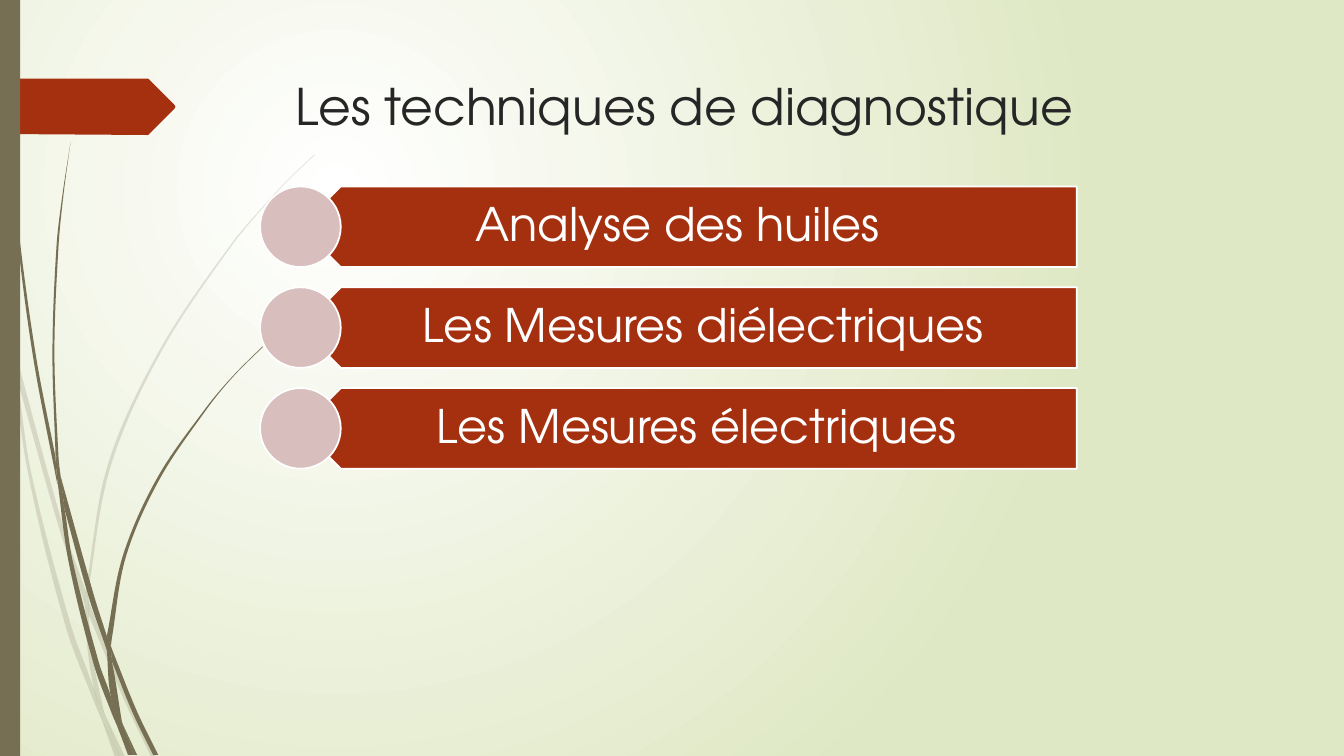
import math
import pptx
import pptx.util
import pptx.oxml
import pptx.dml.color
import pptx.enum.shapes
import pptx.enum.text
from pptx.util import Inches

FONT = "TeX Gyre Adventor"
RUST = "A53010"
OLIVE = "766F54"
DRAWING = 'xmlns:a="http://schemas.openxmlformats.org/drawingml/2006/main"'
SHAPES = pptx.enum.shapes.MSO_SHAPE


def color(hex_string):
    return pptx.dml.color.RGBColor.from_string(hex_string)


def curve_controls(knots):
    padded = [knots[0], *knots, knots[-1]]
    tangents = []
    for before, knot, after in zip(padded, knots, padded[2:]):
        reach = math.dist(before, knot) + math.dist(knot, after)
        tangents.append([(b - a) / reach for a, b in zip(before, after)])
    controls = []
    for start, end, leaving, arriving in zip(knots, knots[1:], tangents, tangents[1:]):
        third = math.dist(start, end) / 3
        controls.append((
            [p + third * m for p, m in zip(start, leaving)],
            [p - third * m for p, m in zip(end, arriving)],
            end,
        ))
    return controls


presentation = pptx.Presentation()
presentation.slide_width = Inches(13.33)
presentation.slide_height = Inches(7.5)
slide = presentation.slides.add_slide(presentation.slide_layouts[5])

background = slide.background.fill
background.gradient()
for stop, hex_string in zip(background.gradient_stops, ["FFFFFF", "DFE8C4"]):
    stop.color.rgb = color(hex_string)
gradient = slide.element.xpath(".//a:gradFill")[0]
linear = gradient.xpath("a:lin")[0]
gradient.replace(linear, pptx.oxml.parse_xml(
    f'<a:path {DRAWING} path="circle">'
    '<a:fillToRect l="50000" t="50000" r="100000" b="100000"/></a:path>'
))

pale_blades = [
    ([(0, 2.99), (0.1, 3.44), (0.11, 3.5)], [(0, 2.82), (0.09, 3.22), (0.11, 3.5)]),
    ([(0.17, 3.76), (0.58, 5.22), (0.84, 5.99)], [(0.14, 3.45), (0.62, 5.2), (0.85, 5.86)]),
    ([(0.88, 6.1), (1.23, 6.94), (1.5, 7.51)], [(0.88, 5.96), (0.92, 6.07), (1.27, 6.92), (1.55, 7.51)]),
    ([(1.05, 7.11), (1.19, 7.51)], [(1.05, 7.11), (1.24, 7.51)]),
    ([(0.11, 3.5), (0.28, 4.7), (0.65, 6.21), (0.92, 6.93), (1.01, 7.14)],
     [(0.11, 3.5), (0.17, 3.76), (0.31, 4.69), (0.7, 6.19), (0.93, 6.83), (0.99, 7.07), (1.01, 7.14)]),
    ([(0.84, 5.99), (0.87, 6.46), (0.93, 6.83), (0.96, 6.92), (1.05, 7.11)],
     [(0.88, 6.08), (0.91, 6.46), (1.03, 7.06), (1.05, 7.11)]),
    ([(3.12, 1.53), (2.89, 1.75), (2.68, 1.97), (2.28, 2.44), (1.58, 3.48), (1.07, 4.61), (0.85, 5.86)],
     [(3.12, 1.54), (2.9, 1.75), (2.68, 1.98), (2.29, 2.45), (1.6, 3.49), (1.1, 4.62), (0.88, 5.84), (0.88, 5.96)]),
    ([(1.01, 7.14), (1.14, 7.51)], [(1.01, 7.14), (1.19, 7.51)]),
    ([(0.85, 5.86), (0.84, 5.99), (0.88, 6.08)], [(0.85, 5.86), (0.88, 5.96), (0.88, 6.1)]),
    ([(0.93, 6.83), (0.99, 7.07), (1.01, 7.14), (1.19, 7.51)],
     [(0.93, 6.83), (0.96, 6.92), (1.05, 7.11), (1.19, 7.51)]),
]
dark_blades = [
    ([(0.03, 0), (0.07, 1.1), (0.17, 2.33), (0.33, 3.55), (0.57, 4.81)],
     [(0.04, 0), (0.08, 1.09), (0.19, 2.32), (0.36, 3.55), (0.55, 4.53)]),
    ([(0.64, 5.05), (0.88, 5.92), (1.06, 6.45)], [(0.6, 4.72), (0.93, 5.9), (1.06, 6.31)]),
    ([(1.11, 6.56), (1.32, 7.08), (1.52, 7.49)], [(1.1, 6.41), (1.13, 6.49), (1.36, 7.06), (1.57, 7.49)]),
    ([(0.57, 4.77), (0.68, 5.57), (0.93, 6.59), (1.11, 7.08), (1.17, 7.22)],
     [(0.57, 4.77), (0.64, 5.05), (0.72, 5.56), (0.98, 6.57), (1.1, 6.91), (1.17, 7.22)]),
    ([(0.7, 1.41), (0.62, 1.93), (0.56, 2.45), (0.52, 3.49), (0.55, 4.49)],
     [(0.7, 1.41), (0.63, 1.93), (0.58, 2.45), (0.54, 3.49), (0.58, 4.53), (0.6, 4.72)]),
    ([(1.22, 7.19), (1.33, 7.49)], [(1.22, 7.19), (1.36, 7.49)]),
    ([(0.55, 4.49), (0.57, 4.77), (0.64, 5.05)], [(0.55, 4.49), (0.6, 4.72), (0.64, 5.05)]),
    ([(2.6, 3.44), (2.31, 3.73), (2.04, 4.05), (1.56, 4.74), (1.22, 5.51), (1.06, 6.31)],
     [(2.61, 3.44), (2.31, 3.74), (2.05, 4.06), (1.58, 4.76), (1.25, 5.52), (1.11, 6.33), (1.1, 6.41)]),
    ([(1.17, 7.22), (1.27, 7.49)], [(1.17, 7.22), (1.31, 7.49)]),
    ([(1.06, 6.45), (1.1, 6.91), (1.22, 7.19)], [(1.06, 6.45), (1.11, 6.56), (1.21, 7.16), (1.22, 7.19)]),
    ([(1.06, 6.31), (1.06, 6.45), (1.11, 6.56)], [(1.06, 6.31), (1.1, 6.41), (1.11, 6.56)]),
    ([(1.1, 6.91), (1.17, 7.22), (1.3, 7.49)], [(1.1, 6.91), (1.22, 7.19), (1.33, 7.49)]),
]
outlines = [
    (OLIVE, opacity, [left_edge, right_edge[::-1]])
    for opacity, blades in [(20, pale_blades), (100, dark_blades)]
    for left_edge, right_edge in blades
]
arrow_edges = [[(0, 0.78), (1.47, 0.78)], [(1.73, 1.04), (1.74, 1.06), (1.73, 1.08)], [(1.47, 1.34), (0, 1.33)]]
outlines.append((RUST, 100, arrow_edges))
for fill, opacity, edges in outlines:
    knots = [(Inches(x), Inches(y)) for edge in edges for x, y in edge]
    builder = slide.shapes.build_freeform(*knots[0])
    builder.add_line_segments(knots[1:], close=True)
    outline = builder.convert_to_shape()
    lines = iter(outline._element.xpath(".//a:lnTo"))
    for number, edge in enumerate(edges):
        if number:
            next(lines)
        for controls in curve_controls(edge):
            points = "".join(
                f'<a:pt x="{Inches(x) - outline.left}" y="{Inches(y) - outline.top}"/>' for x, y in controls
            )
            line = next(lines)
            line.getparent().replace(line, pptx.oxml.parse_xml(f"<a:cubicBezTo {DRAWING}>{points}</a:cubicBezTo>"))
    outline.shadow.inherit = False
    outline.fill.solid()
    outline.fill.fore_color.rgb = color(fill)
    outline.line.fill.background()
    fill_color = outline._element.xpath("p:spPr/a:solidFill/a:srgbClr")[0]
    fill_color.append(pptx.oxml.parse_xml(f'<a:alpha {DRAWING} val="{opacity * 1000}"/>'))

plain_shapes = [(SHAPES.RECTANGLE, 0, 0, 0.2, 7.5, OLIVE, False)]
techniques = [("Analyse des huiles", 0.77), ("Les Mesures diélectriques", 0.26), ("Les Mesures électriques", 0.39)]
for row in range(len(techniques)):
    plain_shapes += [
        (SHAPES.PENTAGON, 2.98, 1.85 + row, 7.7, 0.8, RUST, True),
        (SHAPES.OVAL, 2.58, 1.85 + row, 0.8, 0.8, "D8BEBD", True),
    ]
for preset, left, top, width, height, fill, is_row in plain_shapes:
    shape = slide.shapes.add_shape(preset, Inches(left), Inches(top), Inches(width), Inches(height))
    shape.shadow.inherit = False
    shape.fill.solid()
    shape.fill.fore_color.rgb = color(fill)
    if is_row:
        shape.line.color.rgb = color("FFFFFF")
        shape.line.width = pptx.util.Pt(1.25)
        shape.rotation = 180 if preset == SHAPES.PENTAGON else 0
    else:
        shape.line.fill.background()

title = slide.shapes.title
labels = [(title, "Les techniques de diagnostique", (2.83, 0.69, 9.75, 1.4), 36, "262626",
           {"vertical_anchor": pptx.enum.text.MSO_ANCHOR.TOP},
           {"alignment": pptx.enum.text.PP_ALIGN.LEFT})]
for row, (technique, right_margin) in enumerate(techniques):
    box = slide.shapes.add_textbox(0, 0, 0, 0)
    labels.append((box, technique, (3.18, 1.85 + row, 7.5, 0.8), 33, "FFFFFF",
                   {"vertical_anchor": pptx.enum.text.MSO_ANCHOR.MIDDLE,
                    "margin_left": Inches(0.35), "margin_right": Inches(right_margin),
                    "margin_top": Inches(0.14), "margin_bottom": Inches(0.14)},
                   {"alignment": pptx.enum.text.PP_ALIGN.CENTER, "line_spacing": 0.9}))
for shape, text, place, size, text_color, frame_format, paragraph_format in labels:
    for name, value in zip(("left", "top", "width", "height"), place):
        setattr(shape, name, Inches(value))
    frame = shape.text_frame
    frame.text = text
    paragraph = frame.paragraphs[0]
    font = paragraph.runs[0].font
    font.color.rgb = color(text_color)
    formats = [
        (frame, {"word_wrap": True, "auto_size": pptx.enum.text.MSO_AUTO_SIZE.NONE, **frame_format}),
        (paragraph, paragraph_format),
        (font, {"name": FONT, "size": pptx.util.Pt(size)}),
    ]
    for target, values in formats:
        for name, value in values.items():
            setattr(target, name, value)

presentation.save("out.pptx")
